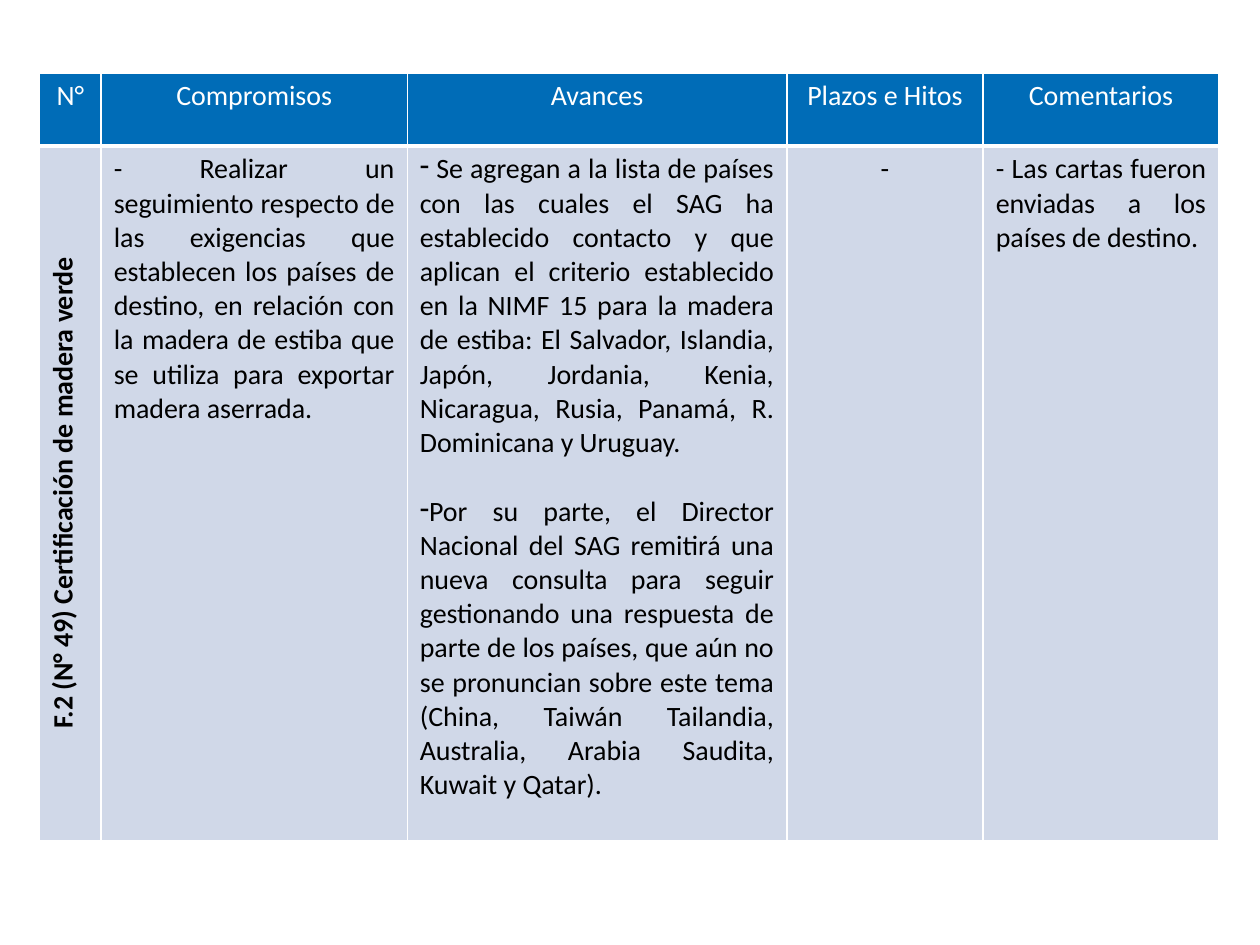
from lxml import etree
from pptx import Presentation
from pptx import util as u
from pptx.dml.color import RGBColor
from pptx.enum import text
from pptx.oxml.ns import qn

WHITE = RGBColor(0xFF, 0xFF, 0xFF)
BLACK = RGBColor(0, 0, 0)
BLUE = RGBColor(0x00, 0x6C, 0xB7)
PALE = RGBColor(0xD0, 0xD8, 0xE8)
CENTER, JUSTIFY = text.PP_ALIGN.CENTER, text.PP_ALIGN.JUSTIFY

COLS = [1.24, 6.17, 7.65, 3.96, 4.75]
ROWS = [1.47, 14]
HEADERS = ["N°", "Compromisos", "Avances", "Plazos e Hitos", "Comentarios"]
TOPIC = "F.2 (N° 49) Certificación de madera verde"
COMMITMENT = (
    "- Realizar un seguimiento respecto de las exigencias que establecen los "
    "países de destino, en relación con la madera de estiba que se utiliza "
    "para exportar madera aserrada."
)
PROGRESS = [
    " Se agregan a la lista de países con las cuales el SAG ha establecido "
    "contacto y que aplican el criterio establecido en la NIMF 15 para la "
    "madera de estiba: El Salvador, Islandia, Japón, Jordania, Kenia, "
    "Nicaragua, Rusia, Panamá, R. Dominicana y Uruguay.",
    "Por su parte, el Director Nacional del SAG remitirá una nueva consulta "
    "para seguir gestionando una respuesta de parte de los países, que aún no "
    "se pronuncian sobre este tema (China, Taiwán Tailandia, Australia, "
    "Arabia Saudita, Kuwait y Qatar).",
]
COMMENT = "- Las cartas fueron enviadas a los países de destino."


def set_borders(cell, top=1, bottom=1):
    tcPr = cell._tc.get_or_add_tcPr()
    for side, pt in (("L", 1), ("R", 1), ("T", top), ("B", bottom)):
        ln = etree.SubElement(tcPr, qn("a:ln" + side), w=str(u.Pt(pt)))
        fill = etree.SubElement(ln, qn("a:solidFill"))
        etree.SubElement(fill, qn("a:srgbClr"), val=str(WHITE))


def set_dash_bullet(p):
    pPr = p._p.get_or_add_pPr()
    pPr.set("marL", "0")
    pPr.set("indent", "0")
    etree.SubElement(pPr, qn("a:buChar"), char="-")


def fill_cell(cell, lines, fill, color, align, bold=False):
    cell.fill.solid()
    cell.fill.fore_color.rgb = fill
    tf = cell.text_frame
    tf.text = "\n".join(lines)
    for p in tf.paragraphs:
        p.alignment = align
        for r in p.runs:
            r.font.name = "Calibri"
            r.font.size = u.Pt(16)
            r.font.bold = bold
            r.font.color.rgb = color


def add_commitments_table(s, left, top, width, height):
    tb = s.shapes.add_table(len(ROWS), len(COLS), left, top, width, height).table
    tb.first_row = tb.horz_banding = False
    for col, w in zip(tb.columns, COLS):
        col.width = u.Cm(w)
    for row, h in zip(tb.rows, ROWS):
        row.height = u.Cm(h)

    body = [
        ([TOPIC], CENTER),
        ([COMMITMENT], JUSTIFY),
        (PROGRESS, JUSTIFY),
        (["-"], CENTER),
        ([COMMENT], JUSTIFY),
    ]
    for i, (header, (lines, align)) in enumerate(zip(HEADERS, body)):
        head, cell = tb.cell(0, i), tb.cell(1, i)
        set_borders(head, bottom=3)
        fill_cell(head, [header], BLUE, WHITE, CENTER)
        set_borders(cell, top=3)
        fill_cell(cell, lines, PALE, BLACK, align, bold=i == 0)

    tb.cell(1, 0)._tc.get_or_add_tcPr().set("vert", "vert270")
    paragraphs = tb.cell(1, 2).text_frame.paragraphs
    paragraphs[0].space_after = u.Pt(19.5)
    for p in paragraphs:
        set_dash_bullet(p)


def main():
    prs = Presentation()
    prs.slide_width, prs.slide_height = u.Cm(25.4), u.Cm(19.05)
    s = prs.slides.add_slide(prs.slide_layouts[6])
    add_commitments_table(s, u.Cm(0.8), u.Cm(1.47), u.Cm(sum(COLS)), u.Cm(sum(ROWS)))
    prs.save("out.pptx")


if __name__ == "__main__":
    main()
